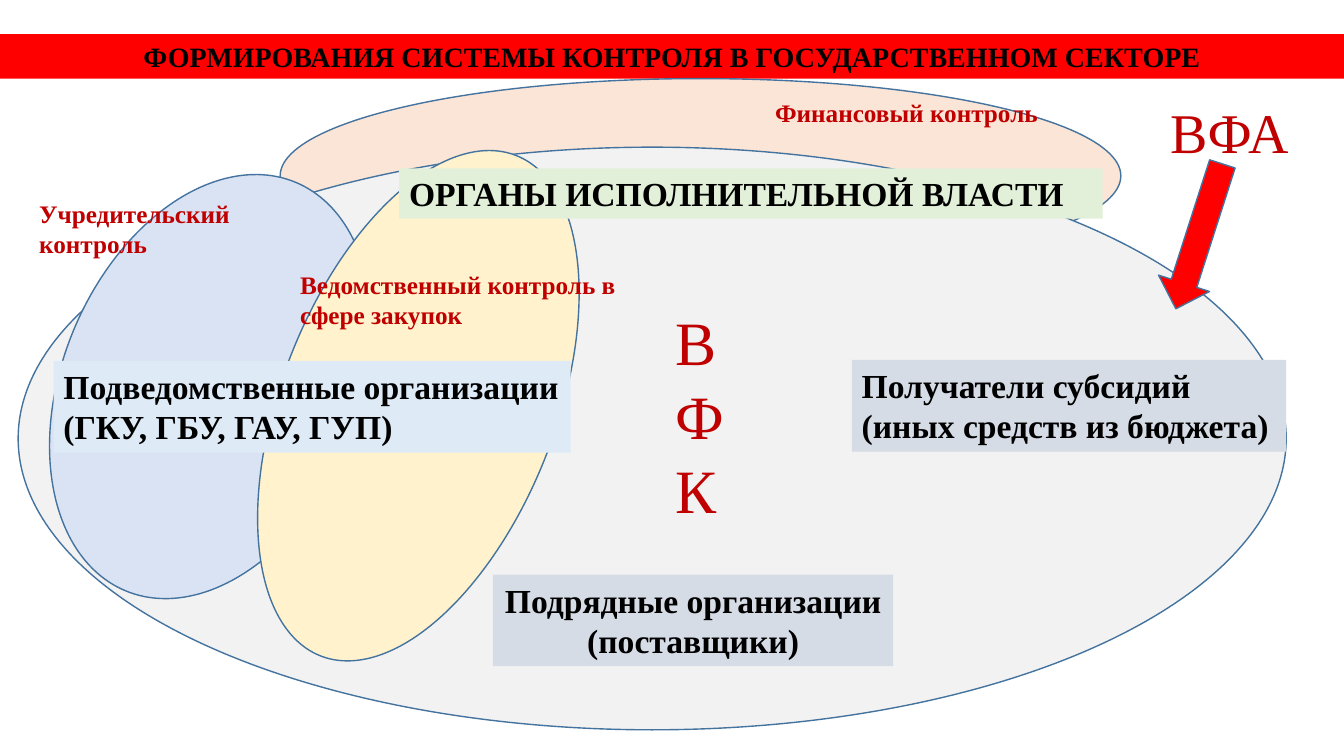
"""Build the slide on the system of control in the public sector."""
from pptx import Presentation
from pptx.dml.color import RGBColor
from pptx.enum.shapes import MSO_SHAPE as Preset
from pptx.enum.text import MSO_ANCHOR as Anchor, MSO_AUTO_SIZE as AutoSize, PP_ALIGN as Align
from pptx.util import Inches, Pt

RED, DARK_RED, BLACK, OUTLINE = "FF0000", "C00000", "000000", "43739E"

presentation = Presentation()
presentation.slide_width = Inches(13.33)
presentation.slide_height = Inches(7.5)
slide = presentation.slides.add_slide(presentation.slide_layouts[5])


def place(left, top, width, height):
    """Turn percentages of the slide into a position and a size."""
    across, down = presentation.slide_width / 100, presentation.slide_height / 100
    return int(left * across), int(top * down), int(width * across), int(height * down)


def write(shape, lines, size, color, bold=True, align=Align.LEFT, fit=AutoSize.SHAPE_TO_FIT_TEXT):
    """Fill a shape with one paragraph per line."""
    frame = shape.text_frame
    frame.word_wrap = True
    frame.auto_size = fit
    frame.vertical_anchor = Anchor.TOP
    for index, line in enumerate(lines):
        paragraph = frame.add_paragraph() if index else frame.paragraphs[0]
        paragraph.alignment = align
        run = paragraph.add_run()
        run.text = line
        run.font.name = "Times New Roman"
        run.font.size = Pt(size)
        run.font.bold = bold
        run.font.color.rgb = RGBColor.from_string(color)


title = slide.shapes.title
title.left, title.top, title.width, title.height = place(0, 4.53, 100, 5.87)
title.fill.solid()
title.fill.fore_color.rgb = RGBColor.from_string(RED)
heading = "ФОРМИРОВАНИЯ СИСТЕМЫ КОНТРОЛЯ В ГОСУДАРСТВЕННОМ СЕКТОРЕ"
write(title, [heading], 20, BLACK, align=Align.CENTER, fit=AutoSize.NONE)

outlined_shapes = [
    (Preset.OVAL, (20.85, 10.4, 62.55, 25.73), 0, "FBE5D6"),
    (Preset.OVAL, (1.35, 19.47, 94.35, 77.07), 0, "F2F2F2"),
    (Preset.OVAL, (4.65, 21.87, 22.05, 58.53), 22.6, "DAE3F3"),
    (Preset.OVAL, (20.93, 18.13, 20.4, 71.07), 21.3, "FFF2CC"),
    (Preset.DOWN_ARROW, (87.23, 21.2, 3.98, 20.13), 17.8, RED),
]
for preset, area, rotation, fill in outlined_shapes:
    shape = slide.shapes.add_shape(preset, *place(*area))
    shape.rotation = rotation
    shape.shadow.inherit = False
    shape.fill.solid()
    shape.fill.fore_color.rgb = RGBColor.from_string(fill)
    shape.line.color.rgb = RGBColor.from_string(OUTLINE)
    shape.line.width = Pt(1)

organisations = [
    ((36.68, 76, 29.78, 12.13), "D6DCE5", Align.CENTER, ["Подрядные организации", "(поставщики)"]),
    ((63.38, 47.6, 32.33, 12.13), "D6DCE5", Align.LEFT, ["Получатели субсидий (иных средств из бюджета)"]),
    ((3.98, 47.73, 38.48, 12.13), "DEEBF7", Align.LEFT, ["Подведомственные организации", "(ГКУ, ГБУ, ГАУ, ГУП)"]),
    ((29.7, 22.27, 52.35, 6.67), "E2F0D9", Align.LEFT, ["ОРГАНЫ ИСПОЛНИТЕЛЬНОЙ ВЛАСТИ"]),
]
for area, fill, align, lines in organisations:
    label = slide.shapes.add_textbox(*place(*area))
    label.fill.solid()
    label.fill.fore_color.rgb = RGBColor.from_string(fill)
    write(label, lines, 24, BLACK, align=align)

controls = [
    ((86.33, 12.27, 12.45, 10.27), "ВФА", 40, False),
    ((56.93, 12.27, 23.78, 5.33), "Финансовый контроль", 18, True),
    ((49.5, 39.6, 6, 30.93), "ВФК", 44, False),
    ((2.18, 25.6, 16.5, 9.47), "Учредительский контроль", 18, True),
    ((21.6, 34.93, 25.5, 9.47), "Ведомственный контроль в сфере закупок", 18, True),
]
for area, caption, size, bold in controls:
    write(slide.shapes.add_textbox(*place(*area)), [caption], size, DARK_RED, bold)

presentation.save("out.pptx")
